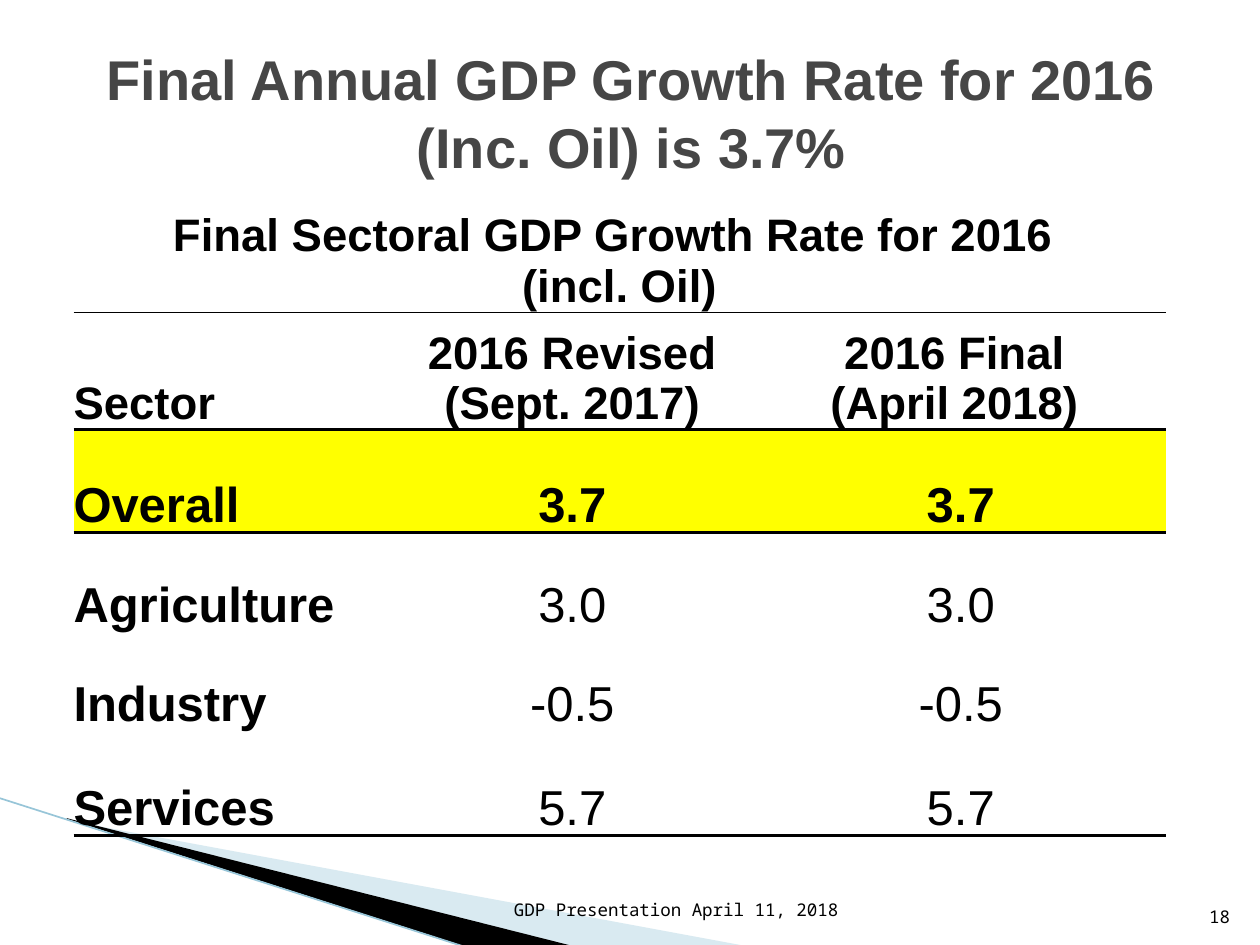
from lxml import etree
from pptx import Presentation
from pptx.dml.color import RGBColor
from pptx.enum import shapes, text
from pptx.oxml import ns
from pptx.util import Pt

BLACK = RGBColor(0, 0, 0)
GREY = RGBColor(0x46, 0x46, 0x46)
YELLOW = RGBColor(0xFF, 0xFF, 0)
PALE_BLUE = RGBColor(0xA0, 0xCB, 0xDC)
EDGE_BLUE = RGBColor(0x97, 0xC5, 0xD8)

NO_STYLE_NO_GRID = "{2D5ABB26-0587-4C30-8999-92F81FD0307C}"
CENTER, LEFT, RIGHT = text.PP_ALIGN.CENTER, text.PP_ALIGN.LEFT, text.PP_ALIGN.RIGHT
THIN, THICK = 0.5, 2

COLUMN_WIDTHS = (180, 210, 234)
ROW_HEIGHTS = (67, 67, 59, 57, 57, 59)
ROW_RULES = {0: THIN, 1: THICK, 5: THICK}
HEADINGS = [
    ("Final Sectoral GDP Growth Rate for 2016 \n(incl. Oil)", "", ""),
    ("Sector", "2016 Revised (Sept. 2017)", "2016 Final \n(April 2018) "),
]
GROWTH = [
    ("Overall", "3.7", "3.7"),
    ("Agriculture", "3.0", "3.0"),
    ("Industry", "-0.5", "-0.5"),
    ("Services", "5.7", "5.7"),
]


def write(frame, words, align, **font_values):
    frame.text = words
    color = font_values.pop("color", BLACK)
    for paragraph in frame.paragraphs:
        paragraph.alignment = align
        for run in paragraph.runs:
            run.font.color.rgb = color
            for key, value in font_values.items():
                setattr(run.font, key, value)


def add_wedge(slide, corners, color, opacity=None):
    builder = slide.shapes.build_freeform(Pt(corners[0][0]), Pt(corners[0][1]))
    builder.add_line_segments([(Pt(x), Pt(y)) for x, y in corners[1:]])
    wedge = builder.convert_to_shape()
    wedge.shadow.inherit = False
    wedge.line.fill.background()
    wedge.fill.solid()
    wedge.fill.fore_color.rgb = color
    if opacity:
        tint = wedge.fill._xPr.find(".//" + ns.qn("a:srgbClr"))
        etree.SubElement(tint, ns.qn("a:alpha"), val=str(opacity * 1000))


def add_corner_sweep(slide, left, top):
    """Layered wedges and edge line running off the bottom of the slide."""
    def place(*points):
        return [(left + x, top + y) for x, y in points]

    add_wedge(slide, place((40, 13), (429, 85), (329, 85), (40, 12)), PALE_BLUE, 40)
    add_wedge(slide, place((38.5, 11.5), (329.5, 85), (268.5, 85.5), (39, 12)), BLACK)
    (x1, y1), (x2, y2) = place((0, 0), (267.5, 85.5))
    edge = slide.shapes.add_connector(
        shapes.MSO_CONNECTOR.STRAIGHT, Pt(x1), Pt(y1), Pt(x2), Pt(y2))
    edge.line.color.rgb = EDGE_BLUE
    edge.line.width = Pt(0.95)
    etree.SubElement(edge._element.spPr, ns.qn("a:effectLst"))


def add_title(slide, left, top, width, height):
    title = slide.shapes.title
    box = {"left": left, "top": top, "width": width, "height": height}
    for key, value in box.items():
        setattr(title, key, Pt(value))
    title.text_frame.auto_size = text.MSO_AUTO_SIZE.NONE
    title.text_frame.vertical_anchor = text.MSO_ANCHOR.MIDDLE
    write(title.text_frame, "Final Annual GDP Growth Rate for 2016\v(Inc. Oil) is 3.7%",
          CENTER, name="Arial", size=Pt(32), bold=True, color=GREY)


def add_footer(slide, words, left, top, width, height):
    footer = slide.shapes.add_textbox(Pt(left), Pt(top), Pt(width), Pt(height))
    footer.text_frame.word_wrap = True
    footer.text_frame.vertical_anchor = text.MSO_ANCHOR.BOTTOM
    write(footer.text_frame, words, RIGHT, name="Noto Sans Mono", size=Pt(10))


def add_rule(cell, side, weight):
    line = etree.SubElement(cell._tc.get_or_add_tcPr(), ns.qn("a:" + side),
                            w=str(Pt(weight)))
    fill = etree.SubElement(line, ns.qn("a:solidFill"))
    etree.SubElement(fill, ns.qn("a:srgbClr"), val=str(BLACK))


def format_cell(cell, row, column, words):
    for side in ("left", "top", "right", "bottom"):
        setattr(cell, "margin_" + side, 0)
    cell.vertical_anchor = text.MSO_ANCHOR.BOTTOM
    for side, rule_row in (("lnT", row - 1), ("lnB", row)):
        if rule_row in ROW_RULES:
            add_rule(cell, side, ROW_RULES[rule_row])
    if words.startswith("Overall") or row == len(HEADINGS):
        cell.fill.solid()
        cell.fill.fore_color.rgb = YELLOW
    else:
        cell.fill.background()
    write(cell.text_frame, words, LEFT if column == 0 and row > 0 else CENTER,
          name="Arial", size=Pt(26 if row < len(HEADINGS) else 28),
          bold=column == 0 or row <= len(HEADINGS))


def add_growth_table(slide, left, top):
    rows = HEADINGS + GROWTH
    frame = slide.shapes.add_table(
        len(rows), len(COLUMN_WIDTHS), Pt(left), Pt(top),
        Pt(sum(COLUMN_WIDTHS)), Pt(sum(ROW_HEIGHTS)))
    table = frame.table
    table.first_row = table.horz_banding = False
    table._tbl.tblPr.find(ns.qn("a:tableStyleId")).text = NO_STYLE_NO_GRID
    for column, width in zip(table.columns, COLUMN_WIDTHS):
        column.width = Pt(width)
    for row, height in zip(table.rows, ROW_HEIGHTS):
        row.height = Pt(height)
    table.cell(0, 0).merge(table.cell(0, len(COLUMN_WIDTHS) - 1))
    for r, values in enumerate(rows):
        for c, words in enumerate(values):
            format_cell(table.cell(r, c), r, c, words)


def main():
    deck = Presentation()
    deck.slide_width, deck.slide_height = Pt(720), Pt(540)
    slide = deck.slides.add_slide(deck.slide_layouts[5])
    add_corner_sweep(slide, -0.5, 456)
    add_title(slide, 12, 18, 698, 92)
    add_footer(slide, "GDP Presentation April 11, 2018", 246, 500.5, 240, 29)
    add_footer(slide, "18", 681, 504.5, 29, 29)
    add_growth_table(slide, 42, 111.5)
    deck.save("out.pptx")


if __name__ == "__main__":
    main()
